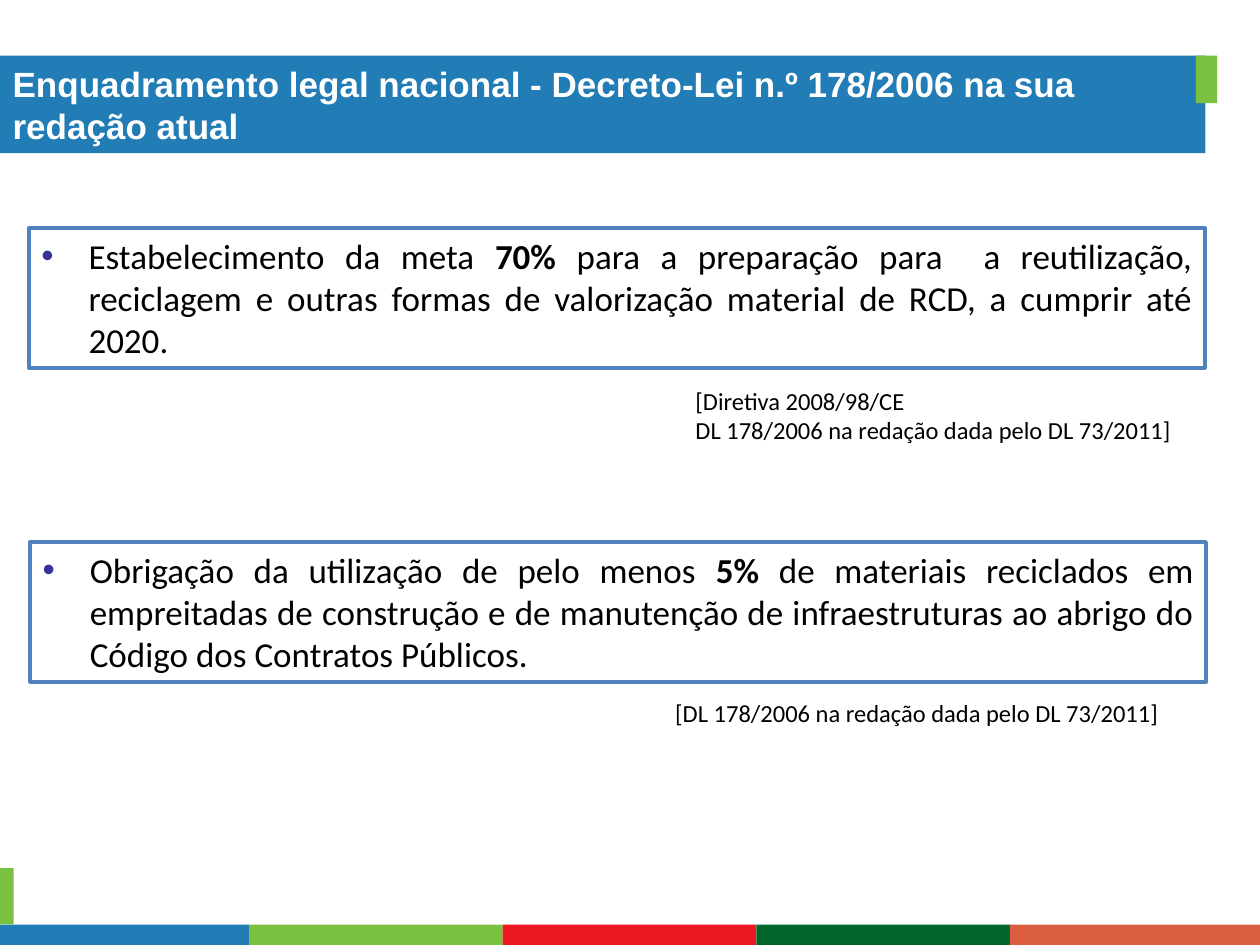
from lxml import etree
from pptx import Presentation
from pptx import util as u
from pptx.dml.color import RGBColor
from pptx.enum import shapes, text
from pptx.oxml import ns

BLUE = RGBColor(0x22, 0x7C, 0xB5)
LIME = RGBColor(0x7A, 0xC1, 0x42)
RED = RGBColor(0xEB, 0x18, 0x21)
GREEN = RGBColor(0x01, 0x66, 0x2A)
CORAL = RGBColor(0xDC, 0x5E, 0x42)
EDGE = RGBColor(0x4F, 0x81, 0xBD)
NAVY = RGBColor(0x33, 0x33, 0x99)
WHITE = RGBColor(0xFF, 0xFF, 0xFF)
BLACK = RGBColor(0, 0, 0)


class Deck:
    """Holds the style and the current slide."""
    head = "Arial"
    body = "Calibri"
    big = 20
    small = 14
    hang = 27

    def __init__(self, wide, high):
        self.prs = Presentation()
        self.prs.slide_width, self.prs.slide_height = u.Pt(wide), u.Pt(high)
        self.slide = self.prs.slides.add_slide(self.prs.slide_layouts[5])

    def run(self, par, words, size, font=body, color=BLACK, bold=False):
        run = par.add_run()
        run.text = words
        run.font.size, run.font.name, run.font.bold = u.Pt(size), font, bold
        run.font.color.rgb = color

    def title(self, words, x, y, w, h):
        bar = self.slide.shapes.title
        bar.left, bar.top, bar.width, bar.height = map(u.Pt, (x, y, w, h))
        bar.fill.solid()
        bar.fill.fore_color.rgb = BLUE
        frame = bar.text_frame
        frame.word_wrap = True
        frame.auto_size = text.MSO_AUTO_SIZE.NONE
        frame.vertical_anchor = text.MSO_ANCHOR.MIDDLE
        par = frame.paragraphs[0]
        par.alignment = text.PP_ALIGN.LEFT
        self.run(par, words, self.big, self.head, WHITE, True)

    def rect(self, x, y, w, h, fill):
        box = self.slide.shapes.add_shape(
            shapes.MSO_SHAPE.RECTANGLE, *map(u.Pt, (x, y, w, h)))
        box.shadow.inherit = False
        box.fill.solid()
        box.fill.fore_color.rgb = fill
        box.line.fill.background()
        return box

    def bullet(self, par):
        props = par._p.get_or_add_pPr()
        props.set("marL", str(u.Pt(self.hang)))
        props.set("indent", str(-u.Pt(self.hang)))
        tint = etree.SubElement(props, ns.qn("a:buClr"))
        etree.SubElement(tint, ns.qn("a:srgbClr"), val=str(NAVY))
        etree.SubElement(props, ns.qn("a:buFont"), typeface="Arial")
        etree.SubElement(props, ns.qn("a:buChar"), char="•")

    def panel(self, x, y, w, h, parts):
        """Framed bullet; every second part is bold."""
        box = self.rect(x, y, w, h, WHITE)
        box.line.color.rgb = EDGE
        box.line.width = u.Pt(2)
        frame = box.text_frame
        frame.word_wrap = True
        frame.vertical_anchor = text.MSO_ANCHOR.TOP
        par = frame.paragraphs[0]
        par.alignment = text.PP_ALIGN.JUSTIFY
        self.bullet(par)
        for i, part in enumerate(parts):
            self.run(par, part, self.big, bold=i % 2 == 1)

    def note(self, x, y, w, h, lines):
        frame = self.slide.shapes.add_textbox(
            *map(u.Pt, (x, y, w, h))).text_frame
        frame.word_wrap = True
        for i, line in enumerate(lines):
            par = frame.add_paragraph() if i else frame.paragraphs[0]
            par.alignment = text.PP_ALIGN.JUSTIFY
            self.run(par, line, self.small)


def main():
    deck = Deck(720, 540)

    # Footer band: equal steps between the colour changes
    step, first = 144.9, 142.4
    edges = [0] + [first + step * i for i in range(4)] + [720]
    for left, right, color in zip(edges, edges[1:],
                                  (BLUE, LIME, RED, GREEN, CORAL)):
        deck.rect(left, 528.3, right - left, 11.7, color)
    deck.rect(0, 496, 7.8, 32.3, LIME)

    # Title bar with its accent
    deck.title("Enquadramento legal nacional - Decreto-Lei n.º 178/2006 "
               "na sua redação atual", 0, 31.8, 688.8, 55.7)
    deck.rect(683.4, 31.8, 12.2, 27.2, LIME)

    # Targets
    deck.panel(16.5, 130.3, 672, 80, (
        "Estabelecimento da meta ", "70%",
        " para a preparação para  a reutilização, reciclagem e outras "
        "formas de valorização material de RCD, a cumprir até 2020."))
    deck.panel(17.2, 309.7, 672, 80, (
        "Obrigação da utilização de pelo menos ", "5% ",
        "de materiais reciclados em empreitadas de construção e de "
        "manutenção de infraestruturas ao abrigo do Código dos Contratos "
        "Públicos."))

    # Legal sources
    law = "DL 178/2006 na redação dada pelo DL 73/2011]"
    deck.note(390.3, 217, 290, 41, ("[Diretiva 2008/98/CE", law))
    deck.note(378.8, 395.3, 297, 24.5, ("[" + law,))

    deck.prs.save("out.pptx")


if __name__ == "__main__":
    main()
